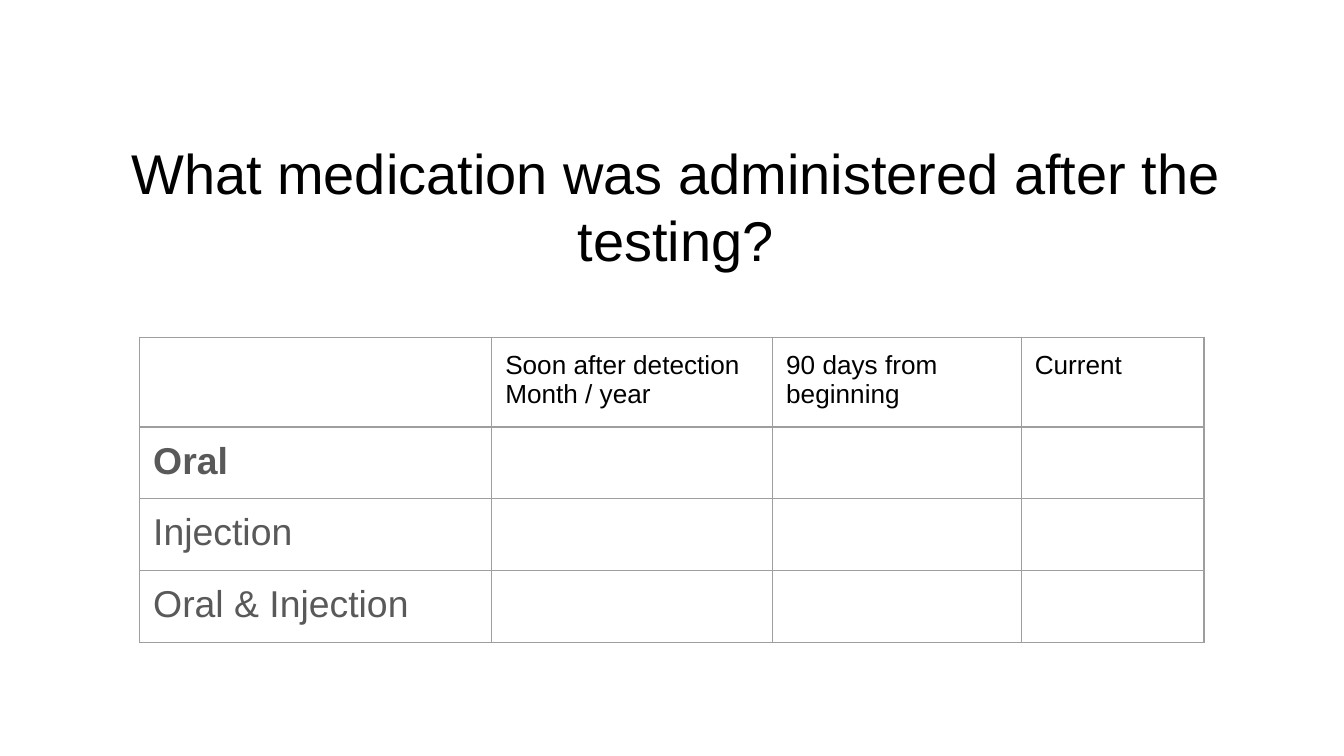
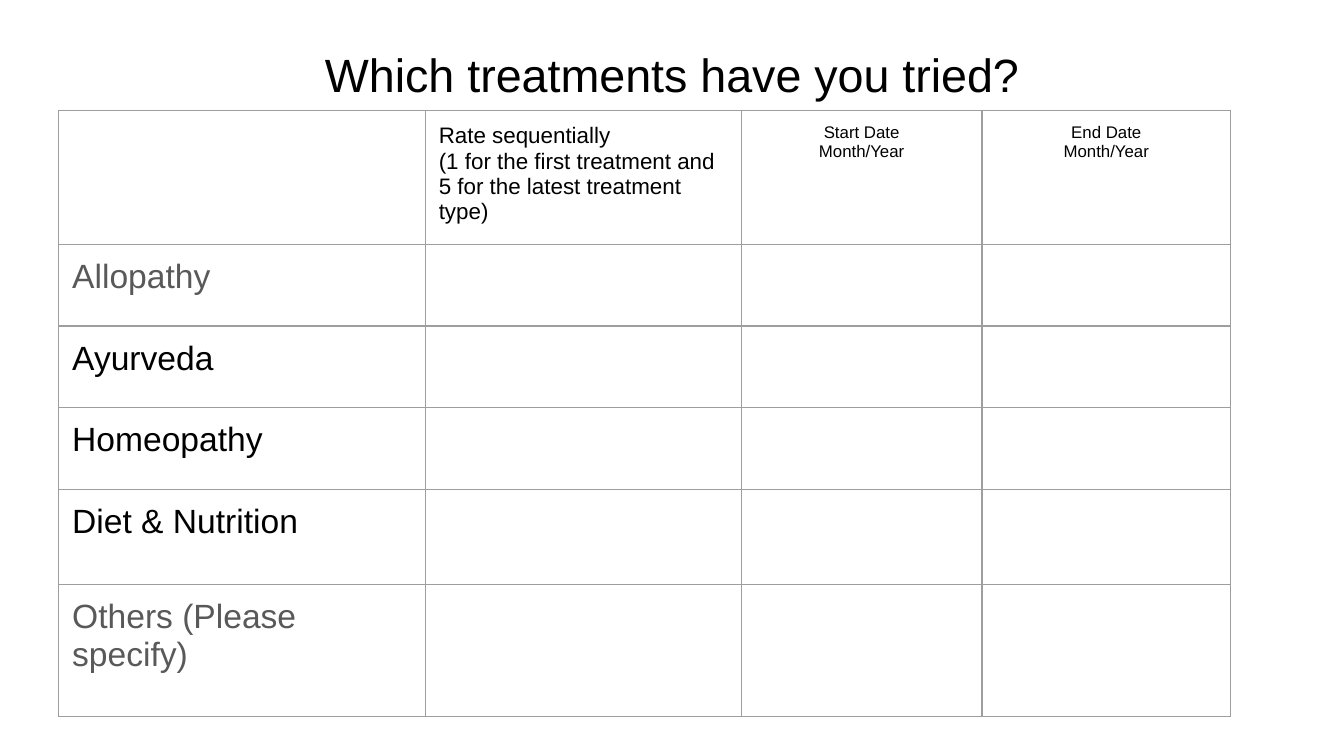
"""Build two patient survey slides, each a title over a blank form table."""
from lxml import etree
from pptx import Presentation
from pptx.dml.color import RGBColor
from pptx.enum import text
from pptx.oxml import ns
from pptx.util import Pt

COLORS = {"ink": "000000", "muted": "595959", "grid": "9E9E9E"}
FONT = "Arial"
INSET = Pt(7.2)
CENTER = text.PP_ALIGN.CENTER


def write(tf, content, size=18, color="ink", bold=False, align=None):
    """Fill a text frame, one paragraph per line of content."""
    for i, line in enumerate(content.split("\n")):
        p = tf.paragraphs[0] if i == 0 else tf.add_paragraph()
        p.alignment = align
        r = p.add_run()
        r.text = line
        r.font.name, r.font.size, r.font.bold = FONT, Pt(size), bold
        r.font.color.rgb = RGBColor.from_string(COLORS[color])


class Deck:
    """Hold the presentation, its style and the current slide."""

    def __init__(self, width, height):
        self.prs = Presentation()
        self.prs.slide_width, self.prs.slide_height = Pt(width), Pt(height)

    def slide(self):
        """Start a new blank slide."""
        self.s = self.prs.slides.add_slide(self.prs.slide_layouts[6])

    def title(self, content, box, size, anchor):
        """Add a centred title."""
        tf = self.s.shapes.add_textbox(*map(Pt, box)).text_frame
        tf.word_wrap = True
        tf.vertical_anchor = anchor
        tf.margin_left = tf.margin_right = INSET
        tf.margin_top = tf.margin_bottom = INSET
        write(tf, content, size=size, align=CENTER)

    def table(self, left, top, cols, rows, header, labels):
        """Add a form with a header row, a label column and empty cells."""
        sp = self.s.shapes.add_table(len(rows), len(cols), Pt(left), Pt(top),
                                     Pt(sum(cols)), Pt(sum(rows)))
        tbl = sp.table
        tbl.first_row = tbl.horz_banding = False
        for col, width in zip(tbl.columns, cols):
            col.width = Pt(width)
        for row, height in zip(tbl.rows, rows):
            row.height = Pt(height)
        for cell in tbl.iter_cells():
            self.style_cell(cell)
        for c, (content, style) in enumerate(header, 1):
            write(tbl.cell(0, c).text_frame, content, **style)
        for r, (content, style) in enumerate(labels, 1):
            write(tbl.cell(r, 0).text_frame, content, **style)

    def style_cell(self, cell):
        """Give a cell its insets, no fill and a thin border."""
        cell.margin_left = cell.margin_right = INSET
        cell.margin_top = cell.margin_bottom = INSET
        cell.fill.background()
        tc_pr = cell._tc.get_or_add_tcPr()
        for i, side in enumerate("LRTB"):
            ln = etree.Element(ns.qn(f"a:ln{side}"), w=str(Pt(0.75)))
            fill = etree.SubElement(ln, ns.qn("a:solidFill"))
            etree.SubElement(fill, ns.qn("a:srgbClr"), val=COLORS["grid"])
            tc_pr.insert(i, ln)


def main():
    """Build both slides and save them."""
    deck = Deck(720, 405)

    deck.slide()
    deck.title("What medication was administered after the testing?",
               (26.6, 29.5, 671, 161.3), 30, text.MSO_ANCHOR.MIDDLE)
    head, label = {"size": 14}, {"size": 20, "color": "muted"}
    deck.table(
        74.9, 180.7, [188.6, 150.5, 133.2, 97.9], [46] + [36.7] * 3,
        [("Soon after detection\nMonth / year", head),
         ("90 days from beginning", head),
         ("Current", head)],
        [("Oral", {**label, "bold": True}),
         ("Injection", label),
         ("Oral & Injection", label)])

    deck.slide()
    deck.title("Which treatments have you tried?",
               (24.5, 7.2, 671, 54.7), 25, text.MSO_ANCHOR.BOTTOM)
    date, muted = {"size": 9, "align": CENTER}, {"color": "muted"}
    deck.table(
        31.5, 59, [196.4, 169.2, 129, 133.2], [68] + [43.7] * 3 + [51.1, 70.8],
        [("Rate sequentially\n(1 for the first treatment and "
          "5 for the latest treatment type)", {"size": 12}),
         ("Start Date\nMonth/Year", date),
         ("End Date\nMonth/Year", date)],
        [("Allopathy", muted),
         ("Ayurveda", {}),
         ("Homeopathy", {}),
         ("Diet & Nutrition", {}),
         ("Others (Please specify)", muted)])

    deck.prs.save("out.pptx")


if __name__ == "__main__":
    main()
